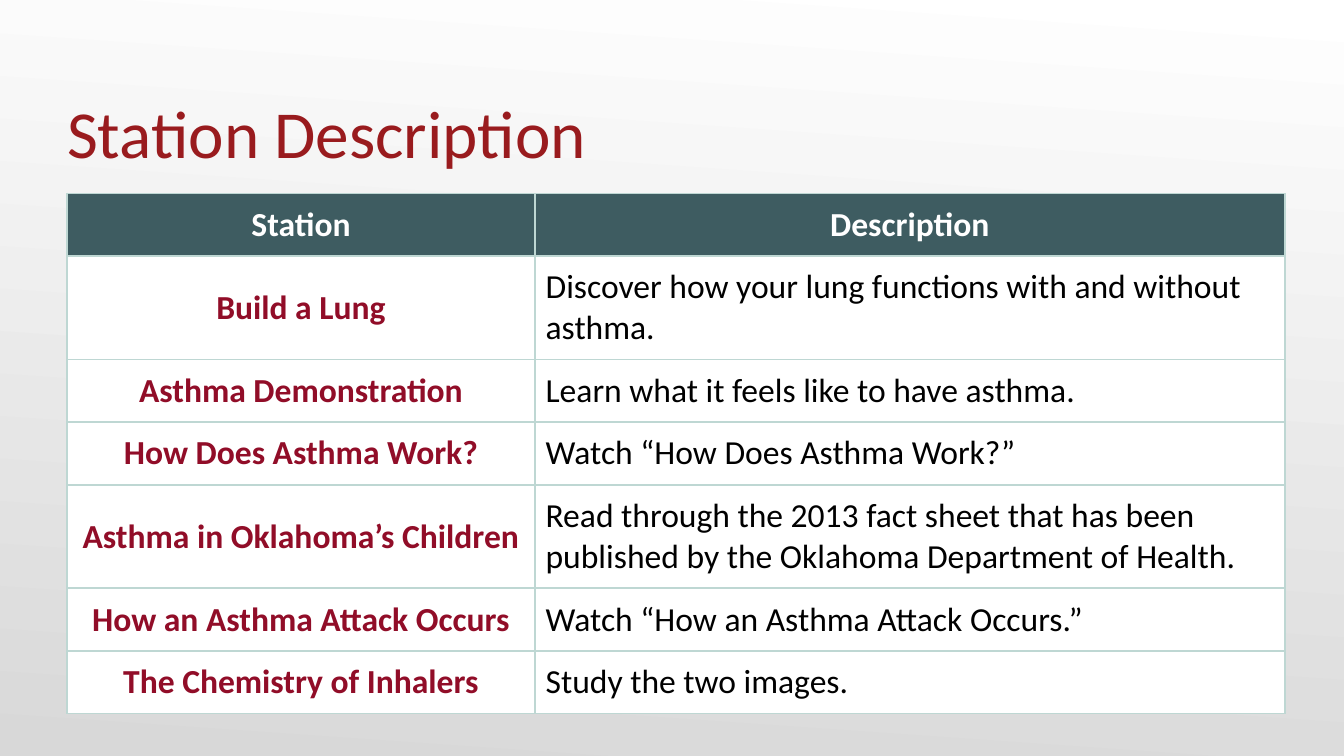
from lxml import etree
from pptx import Presentation
from pptx import util as u
from pptx.dml.color import RGBColor
from pptx.enum import text
from pptx.oxml import ns

FONT = "Calibri"
WHITE = RGBColor(0xFF, 0xFF, 0xFF)
BLACK = RGBColor(0x00, 0x00, 0x00)
GREY = RGBColor(0xD8, 0xD8, 0xD8)
RED = RGBColor(0x99, 0x1B, 0x1E)
CRIMSON = RGBColor(0x91, 0x0D, 0x28)
TEAL = RGBColor(0x3E, 0x5C, 0x61)
MINT = RGBColor(0xBE, 0xD7, 0xD3)

HEADINGS = ("Station", "Description")
STATIONS = [
    ("Build a Lung", "Discover how your lung functions with and without asthma."),
    ("Asthma Demonstration", "Learn what it feels like to have asthma."),
    ("How Does Asthma Work?", "Watch “How Does Asthma Work?”"),
    ("Asthma in Oklahoma’s Children",
     "Read through the 2013 fact sheet that has been published by the "
     "Oklahoma Department of Health."),
    ("How an Asthma Attack Occurs", "Watch “How an Asthma Attack Occurs.”"),
    ("The Chemistry of Inhalers", "Study the two images."),
]
COLUMN_WIDTHS = (3.48, 5.58)
ROW_HEIGHT = 0.25


def write(frame, words, size=18, color=BLACK, bold=False, align=text.PP_ALIGN.LEFT):
    """Put one formatted paragraph into a text frame."""
    frame.word_wrap = True
    para = frame.paragraphs[0]
    para.alignment = align
    span = para.add_run()
    span.text = words
    span.font.name = FONT
    span.font.size = u.Pt(size)
    span.font.bold = bold
    span.font.color.rgb = color


def add_borders(cell, color, width):
    """Draw a solid line on all four sides of a cell."""
    properties = cell._tc.get_or_add_tcPr()
    for position, side in enumerate(("lnL", "lnR", "lnT", "lnB")):
        line = etree.Element(ns.qn(f"a:{side}"), w=str(u.Pt(width)))
        fill = etree.SubElement(line, ns.qn("a:solidFill"))
        etree.SubElement(fill, ns.qn("a:srgbClr"), val=str(color))
        properties.insert(position, line)


def add_background(page):
    """Shade the page from white at the top to grey at the bottom."""
    fill = page.background.fill
    fill.gradient()
    fill.gradient_angle = 360 - 94
    for stop, color in zip(fill.gradient_stops, (WHITE, GREY)):
        stop.color.rgb = color


def add_title(page, left, top, width, height):
    """Place the page title on the bottom edge of its box."""
    box = page.shapes.add_textbox(*map(u.Inches, (left, top, width, height)))
    frame = box.text_frame
    frame.margin_left = frame.margin_right = frame.margin_bottom = 0
    frame.margin_top = u.Inches(0.05)
    frame.vertical_anchor = text.MSO_ANCHOR.BOTTOM
    write(frame, "Station Description", size=36, color=RED)


def add_station_table(page, left, top, width, height):
    """Place the table of stations and what happens at each."""
    rows = [HEADINGS, *STATIONS]
    holder = page.shapes.add_table(
        len(rows), len(HEADINGS), *map(u.Inches, (left, top, width, height)))
    table = holder.table
    for column, column_width in zip(table.columns, COLUMN_WIDTHS):
        column.width = u.Inches(column_width)
    for row in table.rows:
        row.height = u.Inches(ROW_HEIGHT)
    holder.height = u.Inches(height)
    for i, row in enumerate(rows):
        for j, words in enumerate(row):
            cell = table.cell(i, j)
            header, station = i == 0, j == 0
            cell.margin_left = cell.margin_right = u.Inches(0.08)
            cell.margin_top = cell.margin_bottom = u.Inches(0.08)
            cell.fill.solid()
            cell.fill.fore_color.rgb = TEAL if header else WHITE
            add_borders(cell, MINT, 1)
            if station and not header:
                cell.vertical_anchor = text.MSO_ANCHOR.MIDDLE
            strong = header or station
            write(cell.text_frame, words, bold=strong,
                  color=WHITE if header else CRIMSON if station else BLACK,
                  align=text.PP_ALIGN.CENTER if strong else text.PP_ALIGN.LEFT)


def main():
    """Build the deck and save it."""
    deck = Presentation()
    deck.slide_width = u.Inches(10)
    deck.slide_height = deck.slide_width * 9 // 16
    page = deck.slides.add_slide(deck.slide_layouts[6])
    add_background(page)
    add_station_table(page, 0.5, 1.44, sum(COLUMN_WIDTHS), 3.82)
    add_title(page, 0.5, 0.34, 9, 0.94)
    deck.save("out.pptx")


if __name__ == "__main__":
    main()
